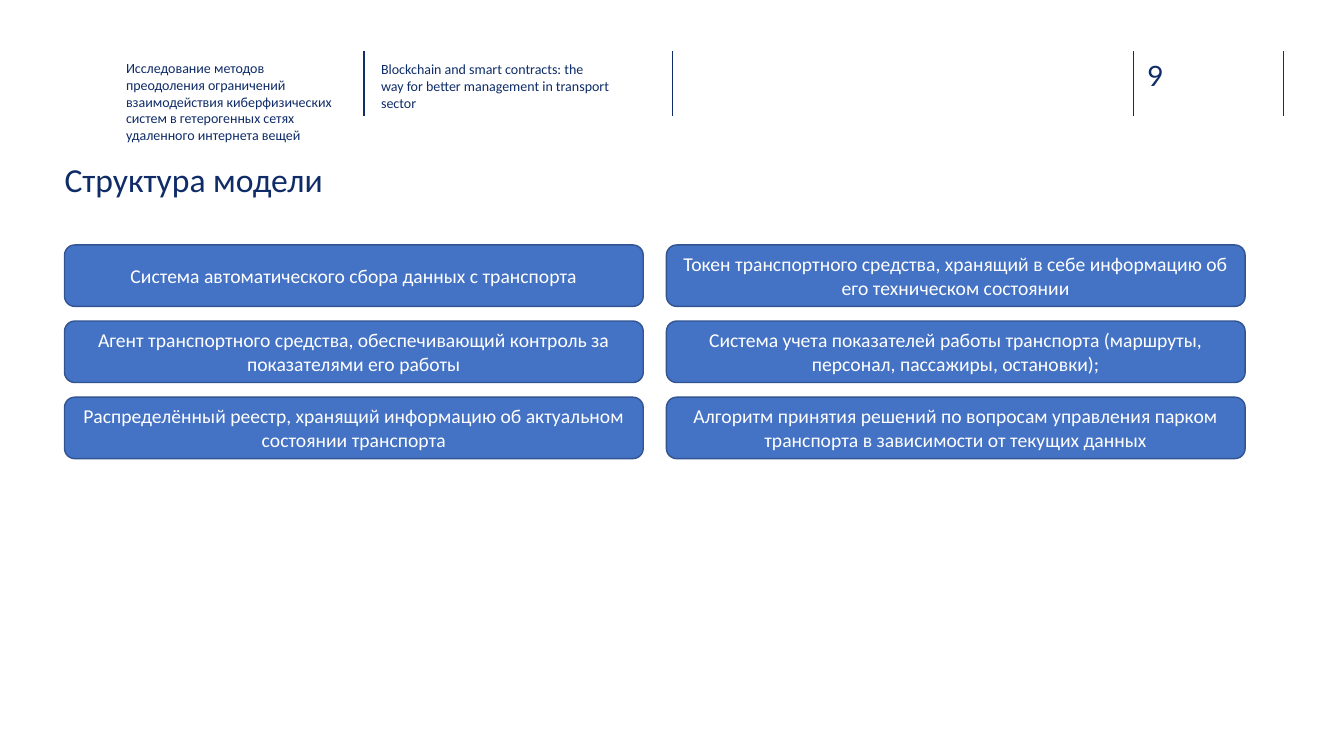
from dataclasses import dataclass

from lxml.etree import SubElement
from pptx import Presentation
from pptx.dml.color import RGBColor
from pptx.enum.shapes import MSO_CONNECTOR as CONN, MSO_SHAPE as SHAPE
from pptx.enum.text import MSO_ANCHOR as ANCHOR, PP_ALIGN as ALIGN
from pptx.oxml.ns import qn
from pptx.util import Inches, Pt


@dataclass(frozen=True)
class Theme:
    navy: str = "102D69"
    heading: str = "0F2C68"
    subject: str = "0E2D69"
    card: str = "4472C4"
    card_edge: str = "325491"
    white: str = "FFFFFF"
    font: str = "Calibri"
    number_font: str = "Lato"
    header_size: int = 10
    card_size: int = 14
    number_size: int = 20
    title_size: int = 24
    line_width: int = 1


class SlideBuilder:
    def __init__(self, slide, theme):
        self.s = slide
        self.theme = theme

    def format_text(self, tf, text, size, color, font, align):
        tf.word_wrap = True
        tf.text = text
        p = tf.paragraphs[0]
        p.alignment = align
        r = p.runs[0]
        r.font.size = Pt(size)
        r.font.name = font
        r.font.color.rgb = RGBColor.from_string(color)

    def divider(self, x, top, bottom):
        line = self.s.shapes.add_connector(
            CONN.STRAIGHT, Inches(x), Inches(top), Inches(x), Inches(bottom))
        line.line.color.rgb = RGBColor.from_string(self.theme.navy)
        line.line.width = Pt(self.theme.line_width)
        SubElement(line._element.spPr, qn("a:effectLst"))

    def label(self, text, box, size, color, font=None):
        sp = self.s.shapes.add_textbox(*map(Inches, box))
        tf = sp.text_frame
        tf.margin_left = tf.margin_right = tf.margin_top = tf.margin_bottom = 0
        self.format_text(tf, text, size, color, font or self.theme.font, ALIGN.LEFT)

    def card(self, text, box):
        t = self.theme
        sp = self.s.shapes.add_shape(SHAPE.ROUNDED_RECTANGLE, *map(Inches, box))
        sp.shadow.inherit = False
        sp.fill.solid()
        sp.fill.fore_color.rgb = RGBColor.from_string(t.card)
        sp.line.color.rgb = RGBColor.from_string(t.card_edge)
        sp.line.width = Pt(t.line_width)
        sp.text_frame.vertical_anchor = ANCHOR.MIDDLE
        self.format_text(sp.text_frame, text, t.card_size, t.white, t.font, ALIGN.CENTER)


CARD_COLUMNS = (
    (
        "Система автоматического сбора данных с транспорта",
        "Агент транспортного средства, обеспечивающий контроль за показателями его работы",
        "Распределённый реестр, хранящий информацию об актуальном состоянии транспорта",
    ),
    (
        "Токен транспортного средства, хранящий в себе информацию об его техническом состоянии",
        "Система учета показателей работы транспорта (маршруты, персонал, пассажиры, остановки);",
        "Алгоритм принятия решений по вопросам управления парком транспорта "
        "в зависимости от текущих данных",
    ),
)


def main():
    prs = Presentation()
    prs.slide_width = Inches(13.33)
    prs.slide_height = Inches(7.5)
    theme = Theme()
    builder = SlideBuilder(prs.slides.add_slide(prs.slide_layouts[6]), theme)

    for x in (3.61, 6.67, 11.24, 12.73):
        builder.divider(x, 0.51, 1.15)

    builder.label("9", (11.38, 0.58, 0.73, 0.34),
                  theme.number_size, theme.navy, theme.number_font)
    builder.label(
        "Исследование методов преодоления ограничений взаимодействия "
        "киберфизических систем в гетерогенных сетях удаленного интернета вещей",
        (1.25, 0.59, 2.08, 0.45), theme.header_size, theme.heading)
    builder.label(
        "Blockchain and smart contracts: the way for better management in transport sector",
        (3.78, 0.6, 2.26, 0.45), theme.header_size, theme.subject)
    builder.label("Структура модели", (0.64, 1.58, 11.72, 0.85),
                  theme.title_size, theme.heading)

    left, top, width, height = 0.64, 2.43, 5.74, 0.61
    column_step, row_step = 5.97, 0.755
    for column, texts in enumerate(CARD_COLUMNS):
        for row, text in enumerate(texts):
            builder.card(text, (left + column * column_step,
                                top + row * row_step, width, height))

    prs.save("out.pptx")


if __name__ == "__main__":
    main()
